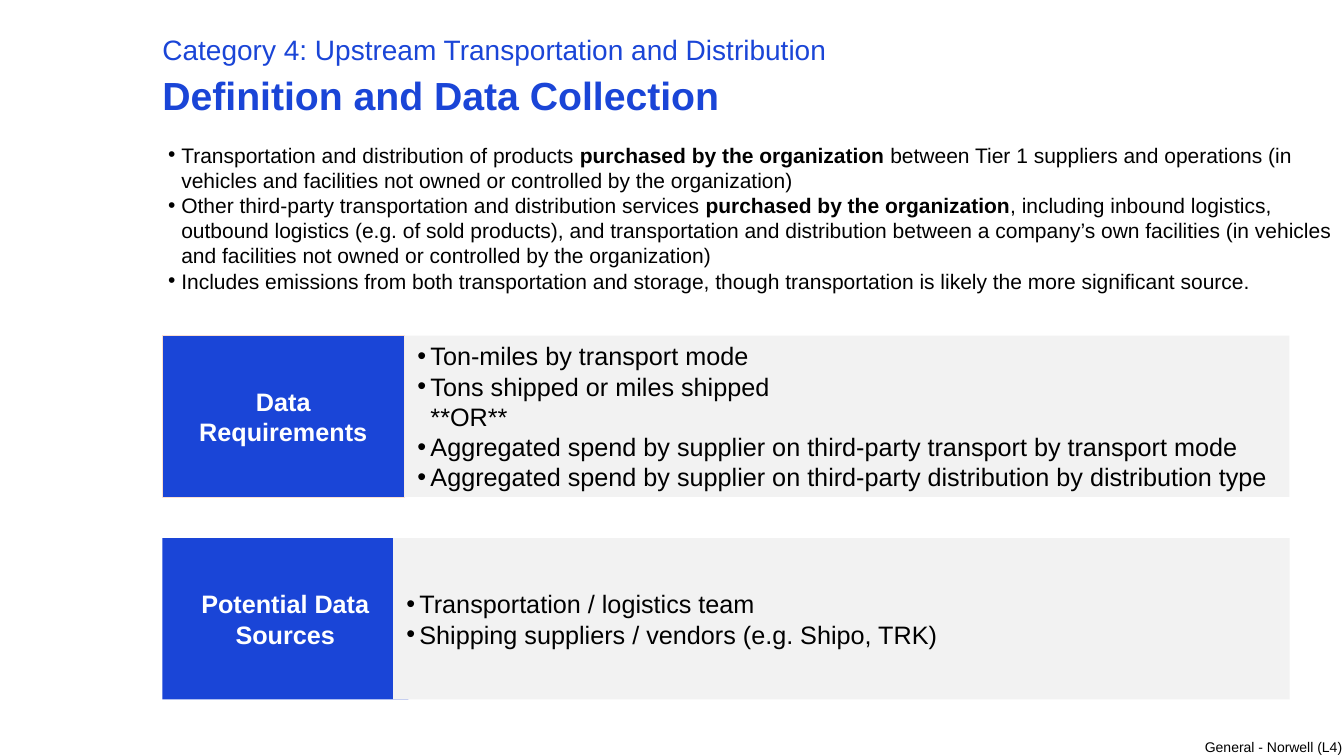
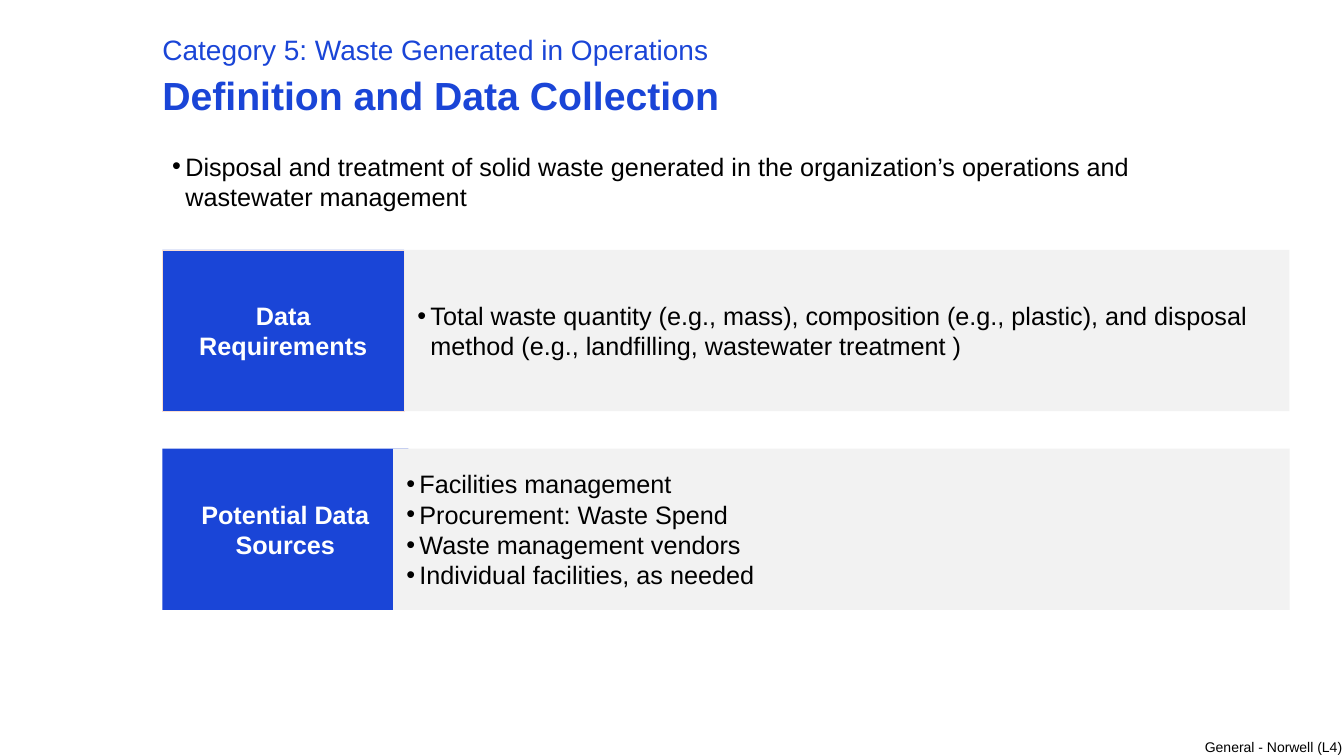
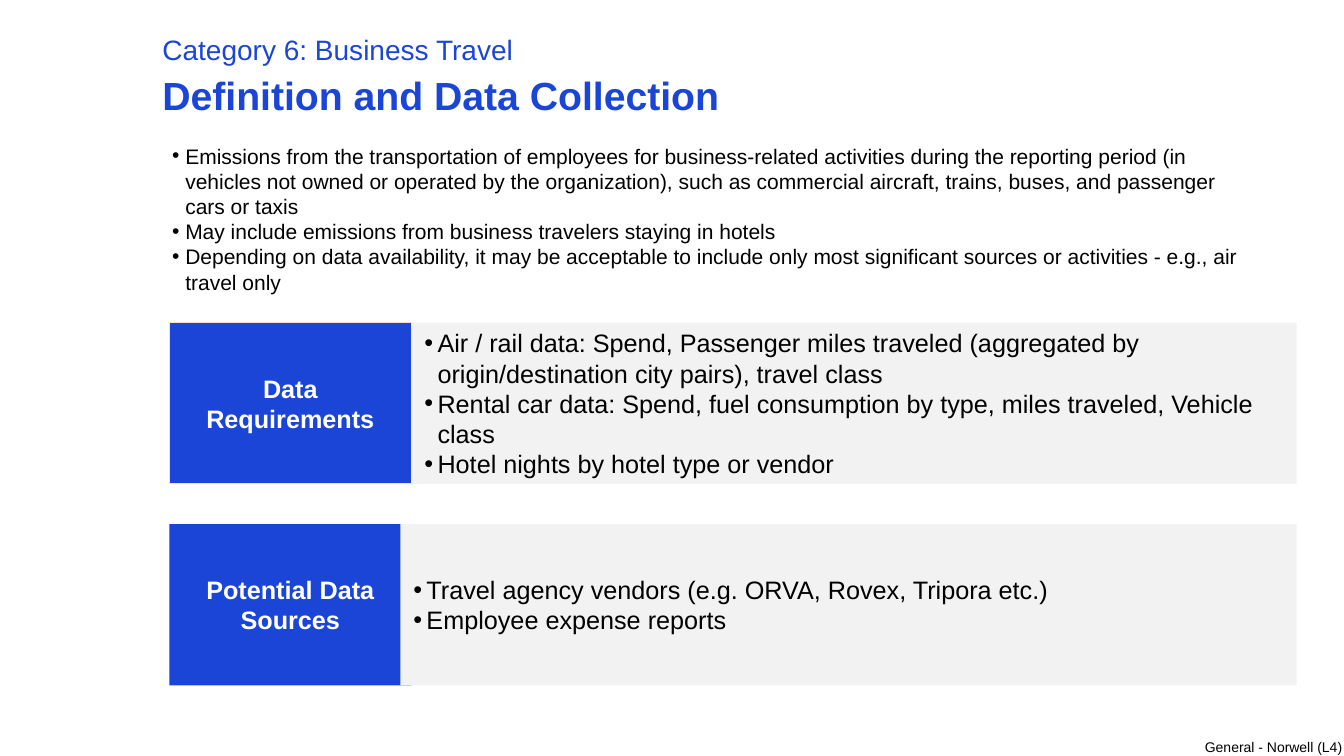
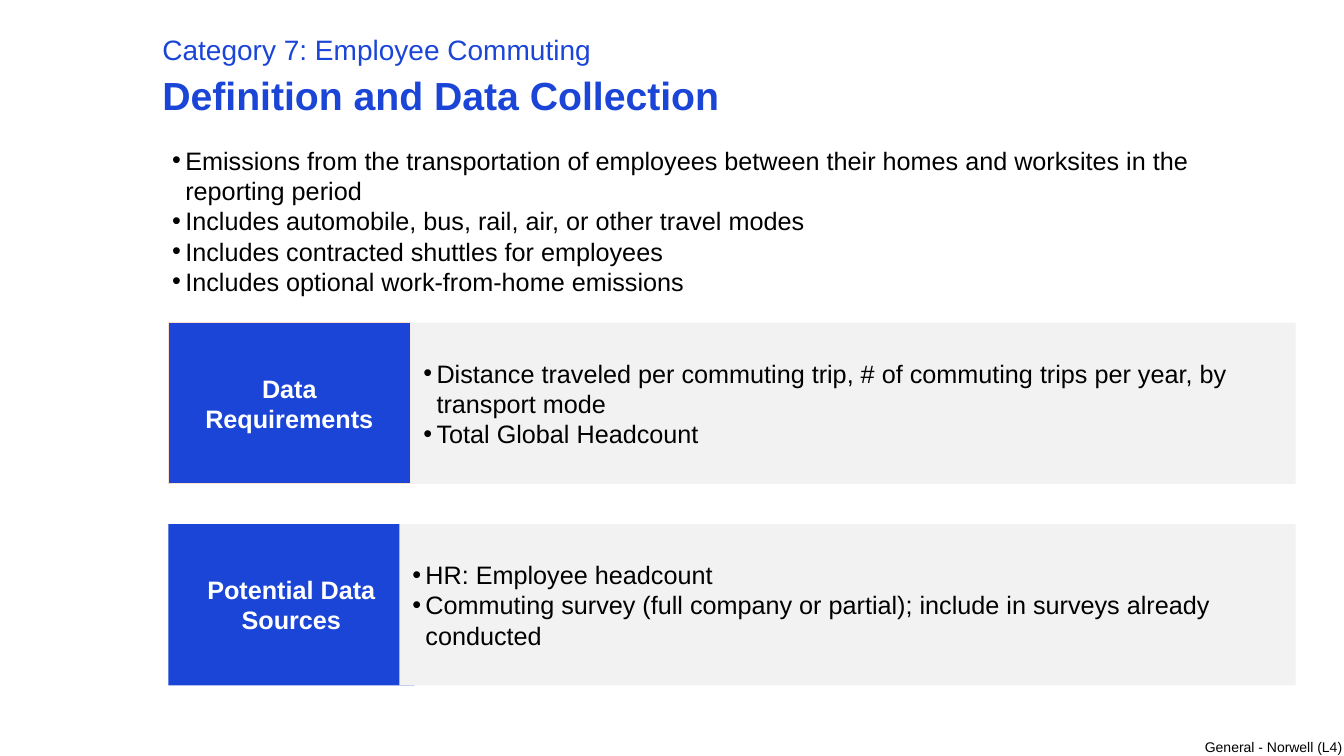
from lxml import etree
from pptx import Presentation
from pptx.dml.color import RGBColor
from pptx.enum.shapes import MSO_SHAPE
from pptx.enum.text import MSO_ANCHOR, MSO_AUTO_SIZE, PP_ALIGN
from pptx.oxml.ns import qn
from pptx.util import Pt

RECT = MSO_SHAPE.RECTANGLE
TOP, MIDDLE, BOTTOM = MSO_ANCHOR.TOP, MSO_ANCHOR.MIDDLE, MSO_ANCHOR.BOTTOM
LEFT, CENTER = PP_ALIGN.LEFT, PP_ALIGN.CENTER
GROW = MSO_AUTO_SIZE.SHAPE_TO_FIT_TEXT

PX = 9144  # 100 px to the inch
FONT = "Arial"
COLORS = {"blue": "1A45D7", "grey": "F2F2F2", "peach": "FCDFD1",
          "black": "000000", "white": "FFFFFF"}
HEAD = "Definition and Data Collection"
FOOT = "General - Norwell (L4)"

# Shared measures
INDENT = 13
TITLE_PAD = (0, 5, 10, 5)
BOX_PAD = (13, 7, 13, 7)
TEXT_PAD = (10, 5, 10, 5)
BAND_H = 160


def write(shape, paras, size, color="black", bold=False, bullet=False,
          pad=TEXT_PAD, anchor=TOP, align=LEFT):
    """Fill a shape with paragraphs; parts between bars are bold."""
    frame = shape.text_frame
    frame.word_wrap = True
    frame.vertical_anchor = anchor
    (frame.margin_left, frame.margin_top,
     frame.margin_right, frame.margin_bottom) = [n * PX for n in pad]
    for i, text in enumerate(paras):
        para = frame.paragraphs[0] if i == 0 else frame.add_paragraph()
        para.alignment = align
        if bullet:
            props = para._p.get_or_add_pPr()
            props.set("marL", str(INDENT * PX))
            props.set("indent", str(-INDENT * PX))
            etree.SubElement(props, qn("a:buFont")).set("typeface", FONT)
            etree.SubElement(props, qn("a:buChar")).set("char", "•")
        first, *rest = text.split("|")
        para.text = first
        for part in rest:
            para.add_run().text = part
        strong = {run.text for run in para.runs if run.text in rest[::2]}
        for run in para.runs:
            run.font.name = FONT
            run.font.size = Pt(size)
            run.font.bold = bold or run.text in strong
            run.font.color.rgb = RGBColor.from_string(COLORS[color])
    return frame


def block(slide, box, fill, line=None):
    """Add a flat rectangle."""
    shape = slide.shapes.add_shape(RECT, *[n * PX for n in box])
    shape.shadow.inherit = False
    shape.fill.solid()
    shape.fill.fore_color.rgb = RGBColor.from_string(COLORS[fill])
    if line:
        shape.line.color.rgb = RGBColor.from_string(COLORS[line])
        shape.line.width = Pt(0.5)
    else:
        shape.line.fill.background()
    return shape


# Slide content: bands start at "left", with one top for each band
SLIDES = [
    {"name": "Category 4: Upstream Transportation and Distribution",
     "intro": (157, 136, 1176, 162), "size": 15,
     "left": 161, "tops": (333, 534), "tag": 244,
     "about": [
         "Transportation and distribution of products |purchased by the organization "
         "|between Tier 1 suppliers and operations (in vehicles and facilities not "
         "owned or controlled by the organization)",
         "Other third-party transportation and distribution services |purchased by the "
         "organization|, including inbound logistics, outbound logistics (e.g. of sold "
         "products), and transportation and distribution between a company’s own "
         "facilities (in vehicles and facilities not owned or controlled by the "
         "organization)",
         "Includes emissions from both transportation and storage, though "
         "transportation is likely the more significant source."],
     "needs": [
         "Ton-miles by transport mode",
         "Tons shipped or miles shipped\n**OR**",
         "Aggregated spend by supplier on third-party transport by transport mode",
         "Aggregated spend by supplier on third-party distribution by distribution type"],
     "from": [
         "Transportation / logistics team",
         "Shipping suppliers / vendors (e.g. Shipo, TRK)"]},
    {"name": "Category 5: Waste Generated in Operations",
     "intro": (161, 145, 972, 71), "size": 18,
     "left": 161, "tops": (248, 445), "tag": 244,
     "about": [
         "Disposal and treatment of solid waste generated in the organization’s "
         "operations and wastewater management"],
     "needs": [
         "Total waste quantity (e.g., mass), composition (e.g., plastic), and disposal "
         "method (e.g., landfilling, wastewater treatment )"],
     "from": [
         "Facilities management",
         "Procurement: Waste Spend",
         "Waste management vendors",
         "Individual facilities, as needed"]},
    {"name": "Category 6: Business Travel",
     "intro": (161, 137, 1100, 162), "size": 15,
     "left": 168, "tops": (320, 520), "tag": 240,
     "about": [
         "Emissions from the transportation of employees for business-related "
         "activities during the reporting period (in vehicles not owned or operated by "
         "the organization), such as commercial aircraft, trains, buses, and passenger "
         "cars or taxis",
         "May include emissions from business travelers staying in hotels",
         "Depending on data availability, it may be acceptable to include only most "
         "significant sources or activities - e.g., air travel only"],
     "needs": [
         "Air / rail data: Spend, Passenger miles traveled (aggregated by "
         "origin/destination city pairs), travel class",
         "Rental car data: Spend, fuel consumption by type, miles traveled, Vehicle class",
         "Hotel nights by hotel type or vendor"],
     "from": [
         "Travel agency vendors (e.g. ORVA, Rovex, Tripora etc.)",
         "Employee expense reports"]},
    {"name": "Category 7: Employee Commuting",
     "intro": (161, 139, 1038, 162), "size": 18,
     "left": 167, "tops": (320, 520), "tag": 244,
     "about": [
         "Emissions from the transportation of employees between their homes and "
         "worksites in the reporting period",
         "Includes automobile, bus, rail, air, or other travel modes",
         "Includes contracted shuttles for employees",
         "Includes optional work-from-home emissions"],
     "needs": [
         "Distance traveled per commuting trip, # of commuting trips per year, by "
         "transport mode",
         "Total Global Headcount"],
     "from": [
         "HR: Employee headcount",
         "Commuting survey (full company or partial); include in surveys already "
         "conducted"]},
]

deck = Presentation()
deck.slide_width, deck.slide_height = 1333 * PX, 750 * PX

for data in SLIDES:
    slide = deck.slides.add_slide(deck.slide_layouts[6])

    # Footer, title, category and definition
    foot, title, name, intro = [
        slide.shapes.add_textbox(*[n * PX for n in box])
        for box in ((1195, 733, 142, 17), (161, 18, 1079, 105),
                    (161, 21, 1079, 49), data["intro"])]
    write(foot, [FOOT], 10, pad=(0, 0, 0, 0)).auto_size = GROW
    frame = write(title, [HEAD], 28, "blue", bold=True, pad=TITLE_PAD, anchor=BOTTOM)
    frame.paragraphs[0].line_spacing = 0.9
    frame = write(name, [data["name"]], 20, "blue", pad=TITLE_PAD, anchor=BOTTOM)
    frame.paragraphs[0].space_after = Pt(8)
    write(intro, data["about"], data["size"], bullet=True).auto_size = GROW

    # Bands: a blue label, then a grey panel over its right edge
    left = data["left"]
    bands = (("Data Requirements", "needs", 240, 240, 878, "peach"),
             ("Potential Data Sources", "from", data["tag"], 229, 889, None))
    for top, (label, key, wide, shift, span, line) in zip(data["tops"], bands):
        tag = block(slide, (left, top, wide, BAND_H), "blue", line)
        write(tag, [label], 18, "white", bold=True, pad=BOX_PAD,
              anchor=MIDDLE, align=CENTER)
        panel = block(slide, (left + shift, top, span, BAND_H), "grey")
        write(panel, data[key], 18, bullet=True, pad=BOX_PAD, anchor=MIDDLE)

deck.save("out.pptx")
